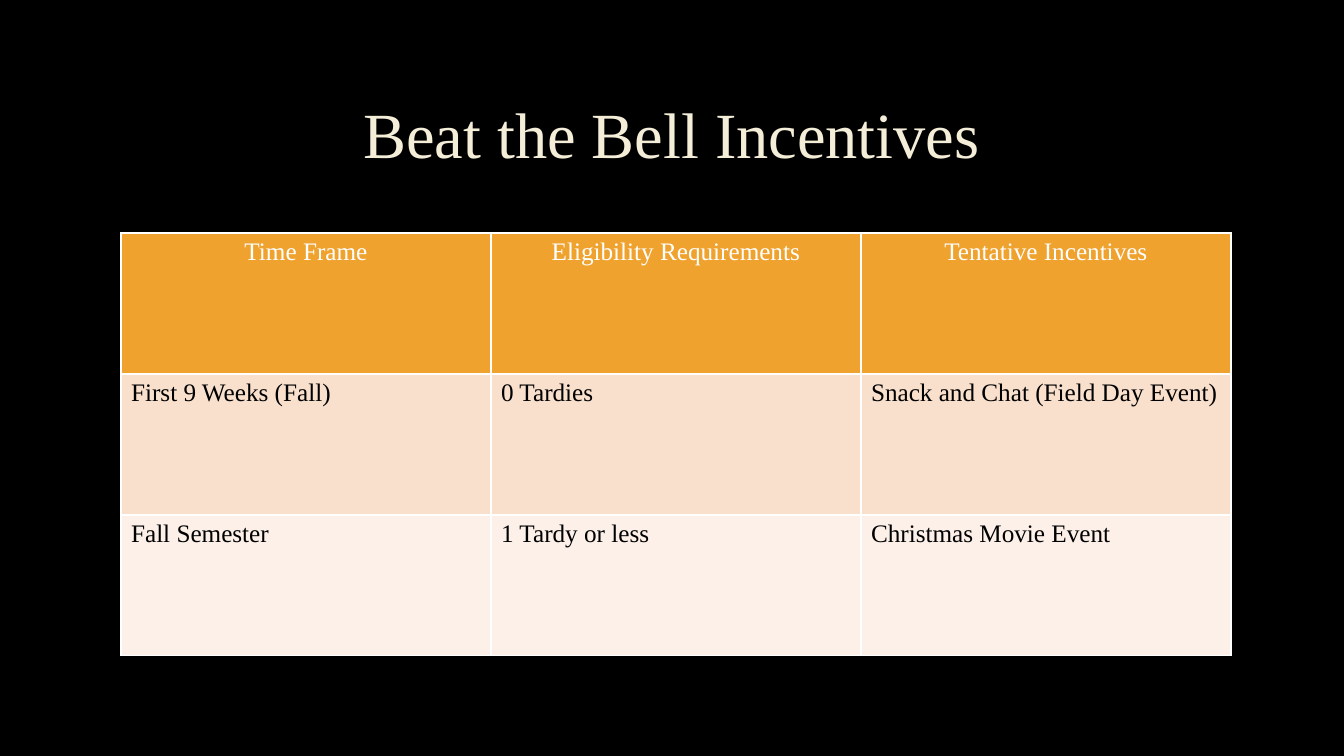
import pptx
import pptx.dml.color
import pptx.enum.text
import pptx.oxml.ns
import pptx.util
from lxml import etree

# Content
TITLE = "Beat the Bell Incentives"
ROWS = [
    ("Time Frame", "Eligibility Requirements", "Tentative Incentives"),
    ("First 9 Weeks (Fall)", "0 Tardies", "Snack and Chat (Field Day Event)"),
    ("Fall Semester", "1 Tardy or less", "Christmas Movie Event"),
]

# Theme and layout, lengths in px
THEME = {
    "font": "Times New Roman",
    "title_size": 46,
    "table_size": 18,
    "border_width": 1,
    "background": "000000",
    "title": "F4EDD8",
    "header_text": "FFFFFF",
    "body_text": "000000",
    "border": "FFFFFF",
    "row_fills": ("F0A22E", "F9E0CD", "FCF0E8"),
}
SLIDE_SIZE = (1344, 756)
TITLE_BOX = (101, 68, 1141, 139)
TABLE_ORIGIN = (121, 233)
COLUMN_WIDTH, ROW_HEIGHT = 370, 141
EMU_PER_PX = 914400 / 100.8


def px(length):
    return pptx.util.Emu(round(length * EMU_PER_PX))


def color(name):
    return pptx.dml.color.RGBColor.from_string(name)


def write_text(paragraph, text, size, text_color, centered):
    align = pptx.enum.text.PP_ALIGN
    paragraph.alignment = align.CENTER if centered else align.LEFT
    run = paragraph.add_run()
    run.text = text
    run.font.name = THEME["font"]
    run.font.size = pptx.util.Pt(size)
    run.font.bold = False
    run.font.color.rgb = color(text_color)


def add_borders(cell):
    qn = pptx.oxml.ns.qn
    properties = cell._tc.get_or_add_tcPr()
    width = str(pptx.util.Pt(THEME["border_width"]))
    for side in ("lnL", "lnR", "lnT", "lnB"):
        line = etree.SubElement(properties, qn("a:" + side), w=width)
        fill = etree.SubElement(line, qn("a:solidFill"))
        etree.SubElement(fill, qn("a:srgbClr"), val=THEME["border"])


def add_title(slide):
    frame = slide.shapes.add_textbox(*map(px, TITLE_BOX)).text_frame
    frame.word_wrap = True
    frame.vertical_anchor = pptx.enum.text.MSO_ANCHOR.MIDDLE
    paragraph = frame.paragraphs[0]
    paragraph.line_spacing = 0.9
    write_text(paragraph, TITLE, THEME["title_size"], THEME["title"], True)


def add_incentive_table(slide):
    row_count, column_count = len(ROWS), len(ROWS[0])
    size = (column_count * COLUMN_WIDTH, row_count * ROW_HEIGHT)
    table = slide.shapes.add_table(
        row_count, column_count, *map(px, TABLE_ORIGIN + size)).table
    for column in table.columns:
        column.width = px(COLUMN_WIDTH)
    for row_index, texts in enumerate(ROWS):
        table.rows[row_index].height = px(ROW_HEIGHT)
        is_header = row_index == 0
        text_color = THEME["header_text" if is_header else "body_text"]
        for column_index, text in enumerate(texts):
            cell = table.cell(row_index, column_index)
            add_borders(cell)
            cell.fill.solid()
            cell.fill.fore_color.rgb = color(THEME["row_fills"][row_index])
            write_text(cell.text_frame.paragraphs[0], text,
                       THEME["table_size"], text_color, is_header)


def main():
    presentation = pptx.Presentation()
    presentation.slide_width, presentation.slide_height = map(px, SLIDE_SIZE)
    slide = presentation.slides.add_slide(presentation.slide_layouts[6])
    slide.background.fill.solid()
    slide.background.fill.fore_color.rgb = color(THEME["background"])
    add_title(slide)
    add_incentive_table(slide)
    presentation.save("out.pptx")


if __name__ == "__main__":
    main()
